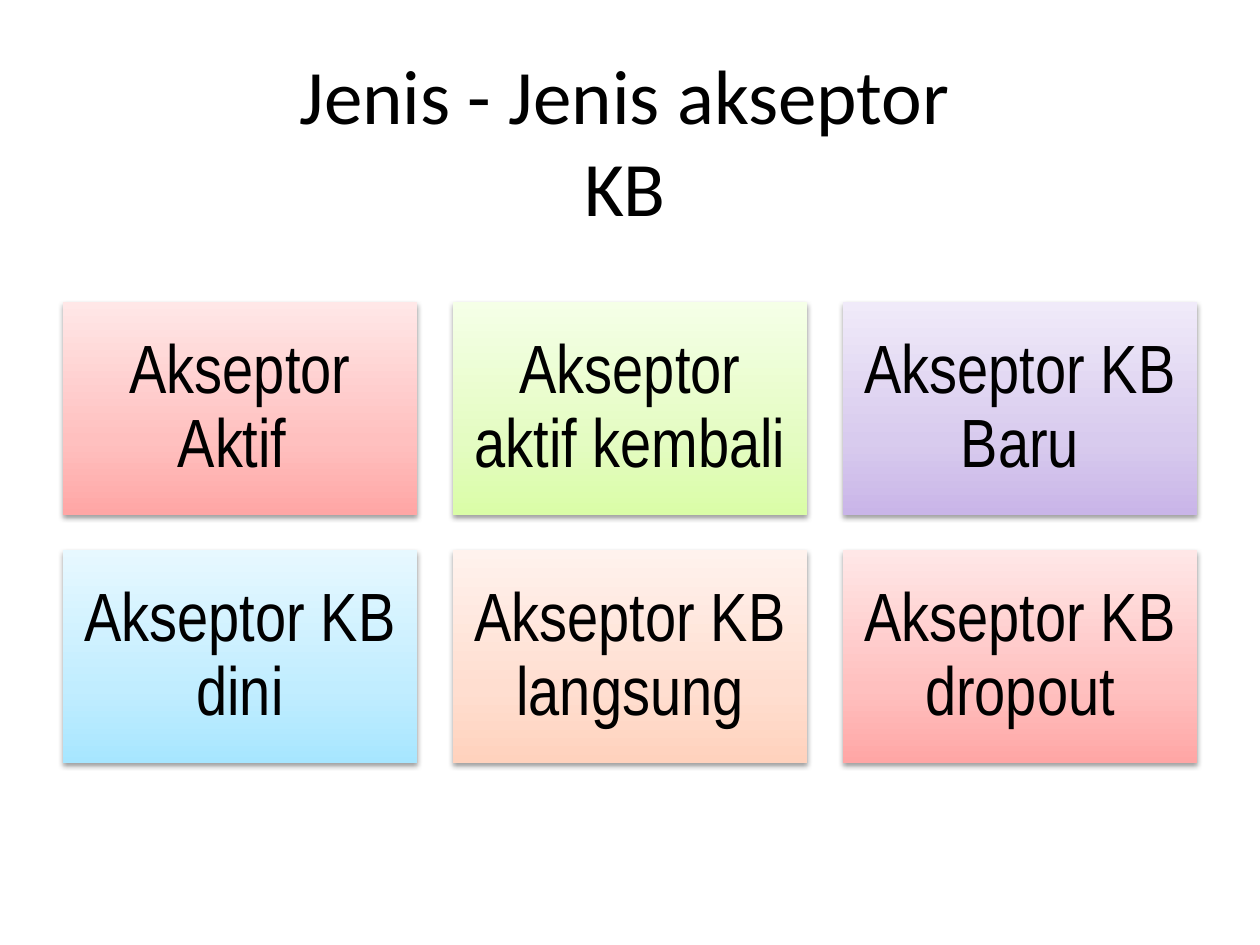
"""Build the slide listing the kinds of family planning acceptors."""
from copy import deepcopy
from dataclasses import dataclass

from lxml import etree
from pptx import Presentation
from pptx.dml.color import RGBColor
from pptx.enum.shapes import MSO_SHAPE
from pptx.enum.text import MSO_ANCHOR, PP_ALIGN
from pptx.oxml.ns import qn
from pptx.shapes.autoshape import Shape
from pptx.slide import Slide
from pptx.text.text import _Paragraph
from pptx.util import Emu, Pt

RECTANGLE = MSO_SHAPE.RECTANGLE
MIDDLE = MSO_ANCHOR.MIDDLE
CENTER = PP_ALIGN.CENTER

PX_PER_INCH = 126
COLUMNS = 3
CARD_LEFT, CARD_TOP = 63, 302
CARD_WIDTH, CARD_HEIGHT = 354, 213
COLUMN_PITCH, ROW_PITCH = 390, 248
CARD_INSET = 20
STOP_POSITIONS = (0, 0.35, 1)

COLORS = {
    "text": "000000",
    "shadow": "000000",
    "red": ("FFA6A5", "FFC0BF", "FFE7E7"),
    "green": ("DAFDA7", "E4FCC2", "F5FFE7"),
    "purple": ("C9B5E8", "D8CBEE", "F0EAF9"),
    "blue": ("A7E6FF", "C1EDFF", "E7F8FF"),
    "orange": ("FFD2BD", "FFDED0", "FFF2ED"),
}


@dataclass(frozen=True)
class Acceptor:
    label: str
    palette: str


ACCEPTORS = (
    Acceptor("Akseptor Aktif ", "red"),
    Acceptor("Akseptor aktif kembali", "green"),
    Acceptor("Akseptor KB Baru", "purple"),
    Acceptor("Akseptor KB dini", "blue"),
    Acceptor("Akseptor KB langsung", "orange"),
    Acceptor("Akseptor KB dropout", "red"),
)


def px(length: int) -> Emu:
    """Turn pixels into EMU."""
    return Emu(round(length * 914400 / PX_PER_INCH))


def style_text(paragraph: _Paragraph, font_name: str, size: int) -> None:
    """Centre a paragraph and set its font."""
    paragraph.alignment = CENTER
    paragraph.font.name = font_name
    paragraph.font.size = Pt(size)
    paragraph.font.color.rgb = RGBColor.from_string(COLORS["text"])


def fill_gradient(card: Shape, palette: str) -> None:
    """Fill a card with three stops running from bottom to top."""
    card.fill.gradient()
    card.fill.gradient_angle = 90
    stop_list = card._element.spPr.find(qn("a:gradFill")).find(qn("a:gsLst"))
    stop_list.insert(1, deepcopy(stop_list[0]))
    for stop, position, color in zip(
        card.fill.gradient_stops, STOP_POSITIONS, COLORS[palette]
    ):
        stop.position = position
        stop.color.rgb = RGBColor.from_string(color)


def cast_shadow(card: Shape) -> None:
    """Give a card a soft shadow below it."""
    card.shadow.inherit = False
    effects = card._element.spPr.find(qn("a:effectLst"))
    shadow = etree.SubElement(
        effects, qn("a:outerShdw"), blurRad="40000", dist="20000",
        dir="5400000", rotWithShape="0",
    )
    color = etree.SubElement(shadow, qn("a:srgbClr"), val=COLORS["shadow"])
    etree.SubElement(color, qn("a:alpha"), val="38000")


def draw_card(slide: Slide, acceptor: Acceptor, index: int) -> None:
    """Draw one acceptor card at its place in the grid."""
    row, column = divmod(index, COLUMNS)
    card = slide.shapes.add_shape(
        RECTANGLE,
        px(CARD_LEFT + column * COLUMN_PITCH),
        px(CARD_TOP + row * ROW_PITCH),
        px(CARD_WIDTH),
        px(CARD_HEIGHT),
    )
    fill_gradient(card, acceptor.palette)
    card.line.fill.background()
    cast_shadow(card)
    frame = card.text_frame
    frame.word_wrap = True
    frame.vertical_anchor = MIDDLE
    frame.margin_left = frame.margin_right = px(CARD_INSET)
    frame.margin_top = frame.margin_bottom = px(CARD_INSET)
    label = frame.paragraphs[0]
    label.text = acceptor.label
    label.line_spacing = 0.9
    style_text(label, "Arial Narrow", 39)


def draw_title(slide: Slide) -> None:
    """Place and fill the title placeholder."""
    title = slide.shapes.title
    title.left, title.top = px(53), px(38)
    title.width, title.height = px(1144), px(204)
    title.text_frame.vertical_anchor = MIDDLE
    heading = title.text_frame.paragraphs[0]
    heading.text = "Jenis - Jenis akseptor\vKB"
    style_text(heading, "Calibri", 44)


def main() -> None:
    """Build and save the presentation."""
    presentation = Presentation()
    presentation.slide_width = px(1260)
    presentation.slide_height = px(945)
    slide = presentation.slides.add_slide(presentation.slide_layouts[5])
    draw_title(slide)
    for index, acceptor in enumerate(ACCEPTORS):
        draw_card(slide, acceptor, index)
    presentation.save("out.pptx")


if __name__ == "__main__":
    main()
